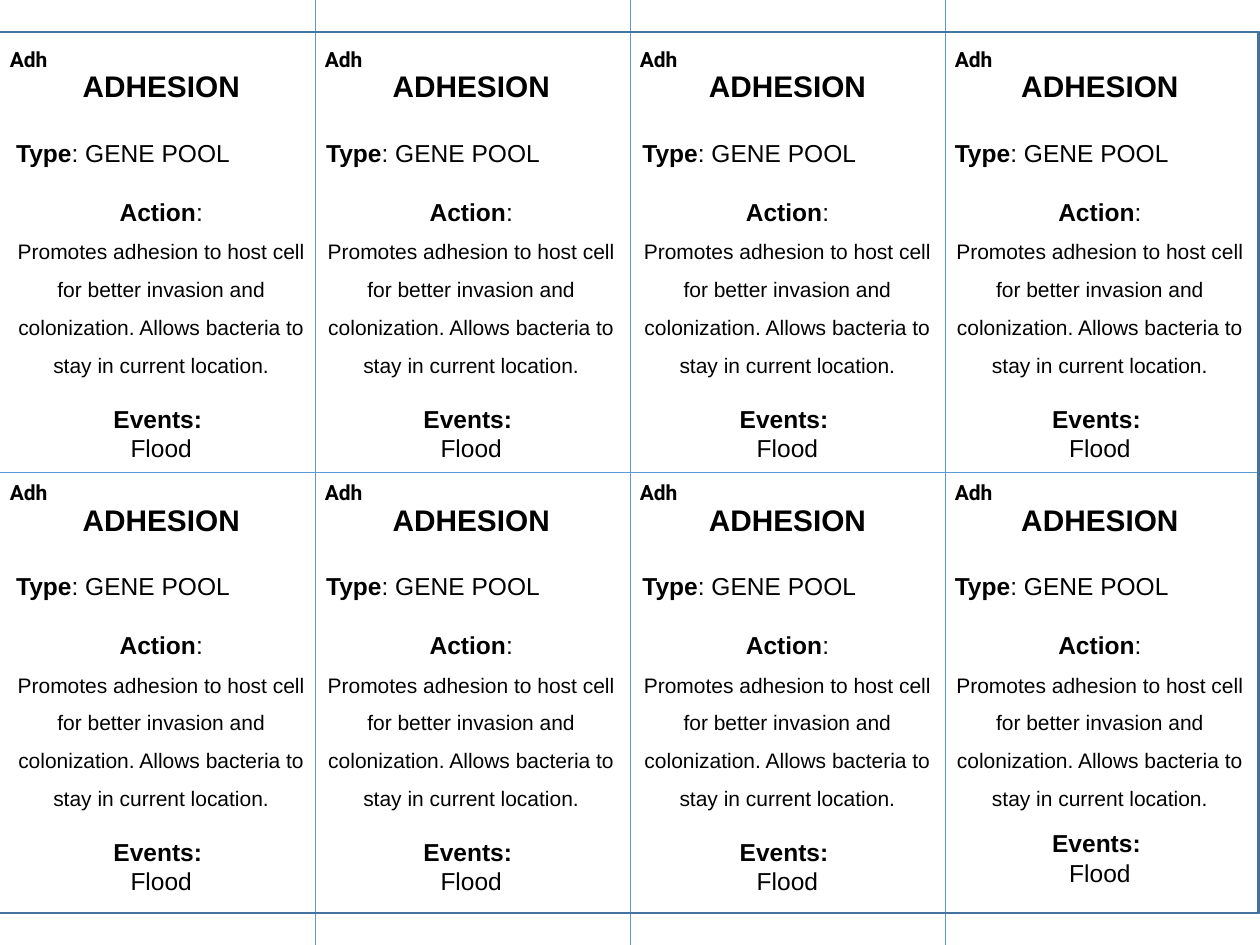
from lxml import etree
from pptx import Presentation
from pptx.dml.color import RGBColor
from pptx.enum.shapes import MSO_CONNECTOR, MSO_SHAPE
from pptx.enum.text import MSO_AUTO_SIZE, PP_ALIGN
from pptx.oxml.ns import qn
from pptx.util import Inches, Pt

LINE = MSO_CONNECTOR.STRAIGHT
FRAME = MSO_SHAPE.FRAME
GROW = MSO_AUTO_SIZE.SHAPE_TO_FIT_TEXT
LEFT, MID = PP_ALIGN.LEFT, PP_ALIGN.CENTER

WIDE, HIGH = 10, 7.5
COLS = 4
STEP = WIDE / COLS
TOP, PITCH = 0.25, 3.44
SHIFTS = [0.03, -0.01, 0, -0.02]
BLUE, EDGE, BLACK = "5B9BD5", "43739E", "000000"
ACTION = ("Promotes adhesion to host cell for better invasion and "
          "colonization. Allows bacteria to stay in current location.")


def color(code):
    """Turn a hex string into a colour."""
    return RGBColor.from_string(code)


def add_rule(shapes, start, end):
    """Draw one thin cutting line."""
    rule = shapes.add_connector(LINE, *(Inches(n) for n in start + end))
    rule.line.color.rgb = color(BLUE)
    rule.line.width = Pt(0.5)
    etree.SubElement(rule.element.spPr, qn("a:effectLst"))


def add_grid(slide):
    """Draw the cutting lines and the frame around the cards."""
    group = slide.shapes.add_group_shape()
    for col in range(1, COLS):
        add_rule(group.shapes, (STEP * col, 0), (STEP * col, HIGH))
    add_rule(group.shapes, (0, HIGH / 2), (WIDE, HIGH / 2))
    frame = slide.shapes.add_shape(
        FRAME, Inches(-0.01), Inches(TOP), Inches(WIDE), Inches(HIGH - 2 * TOP))
    frame.adjustments[0] = 0.001
    frame.shadow.inherit = False
    frame.fill.solid()
    frame.fill.fore_color.rgb = color(BLUE)
    frame.line.color.rgb = color(EDGE)
    frame.line.width = Pt(1)


def add_box(slide, left, top, width, height, wrap):
    """Add a text box that grows with its text."""
    box = slide.shapes.add_textbox(*(Inches(n) for n in (left, top, width, height)))
    box.text_frame.word_wrap = wrap
    box.text_frame.auto_size = GROW
    return box.text_frame


def style(para, size, bold=None, name="Arial"):
    """Set the font of a paragraph."""
    para.font.name = name
    para.font.size = Pt(size)
    para.font.bold = bold
    para.font.color.rgb = color(BLACK)


def add_body(slide, left, top, height, gap):
    """Write the title, type, action and events of a card."""
    frame = add_box(slide, left, top, STEP, height, True)
    rows = [
        ([("ADHESION", True)], 17, MID, 1, 0),
        ([("Type", True), (": GENE POOL", False)], 14, LEFT, 1.5, 11),
        ([("Action", True), (":", False)], 14, MID, 1, 17),
        ([(ACTION, False)], 12, MID, 1.5, 0),
        ([("Events: ", True)], 14, MID, 1, gap),
        ([("Flood", False)], 14, MID, 1, 0),
    ]
    for num, (runs, size, align, space, before) in enumerate(rows):
        para = frame.add_paragraph() if num else frame.paragraphs[0]
        para.alignment = align
        para.line_spacing = float(space)
        para.space_before = Pt(before)
        style(para, size, runs[0][1] if len(runs) == 1 else None)
        for text, bold in runs:
            run = para.add_run()
            run.text = text
            if len(runs) > 1:
                run.font.bold = bold


def add_tag(slide, left, top):
    """Write the short name in the corner of a card."""
    para = add_box(slide, left, top, 0.53, 0.3, False).paragraphs[0]
    para.text = "Adh"
    style(para, 12, True, "Roboto")


def main():
    """Build the sheet of cards."""
    deck = Presentation()
    deck.slide_width, deck.slide_height = Inches(WIDE), Inches(HIGH)
    slide = deck.slides.add_slide(deck.slide_layouts[6])
    add_grid(slide)
    cells = [(row, col) for row in range(2) for col in range(COLS)]
    for row, col in cells:
        last = (row, col) == cells[-1]
        add_body(slide, STEP * col + SHIFTS[col], TOP + PITCH * row + 0.24,
                 3.28 if last else 3.25, 10 if last else 15)
    for row, col in cells:
        add_tag(slide, STEP * col - 0.02, TOP + PITCH * row + 0.07)
    deck.save("out.pptx")


if __name__ == "__main__":
    main()
